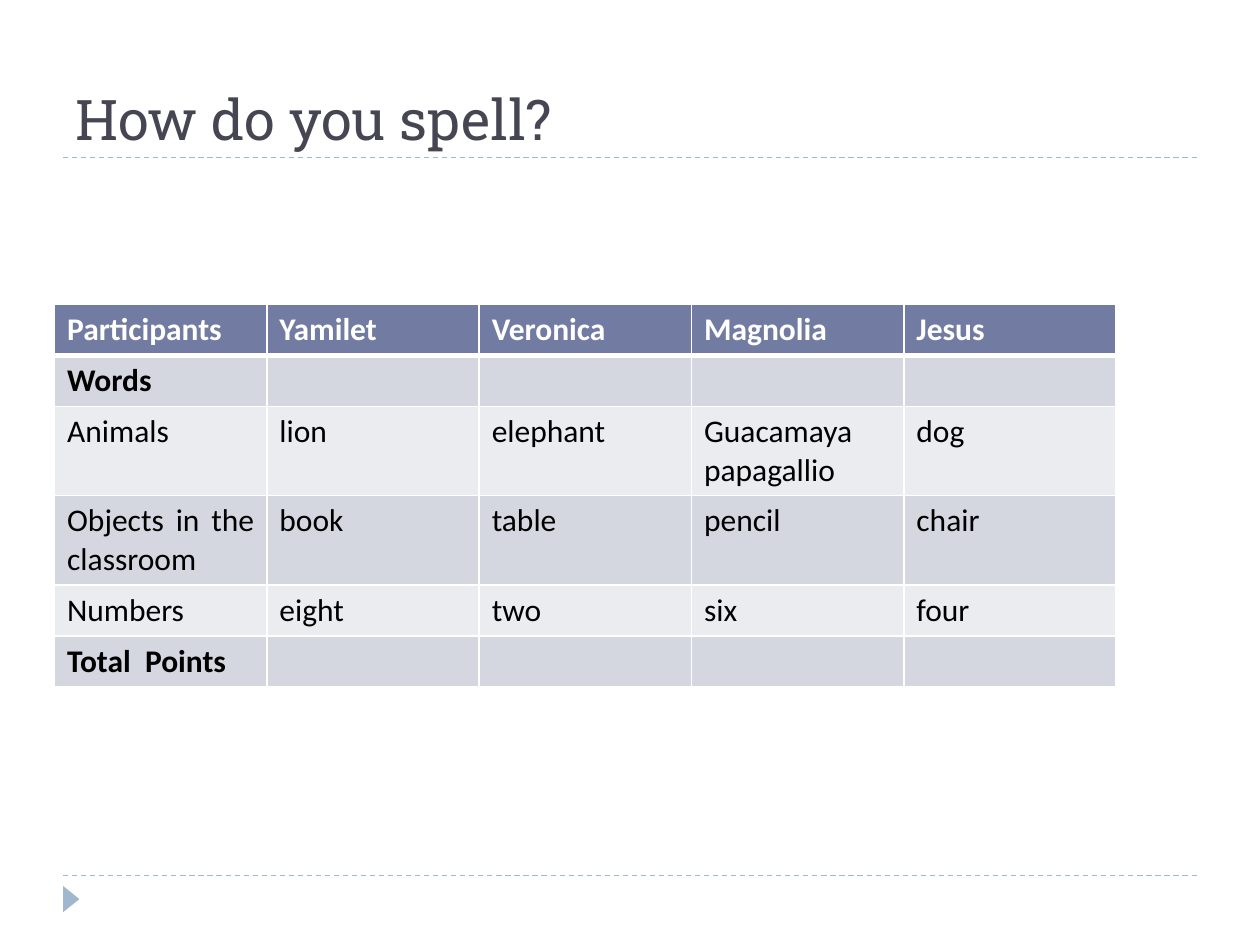
from lxml import etree
from pptx import Presentation
from pptx.dml.color import RGBColor
from pptx.enum.dml import MSO_LINE
from pptx.enum.shapes import MSO_CONNECTOR, MSO_SHAPE
from pptx.enum.text import MSO_ANCHOR, PP_ALIGN
from pptx.oxml.ns import qn
from pptx.util import Cm, Pt

STRAIGHT = MSO_CONNECTOR.STRAIGHT
TRIANGLE = MSO_SHAPE.ISOSCELES_TRIANGLE
DASH = MSO_LINE.DASH
BOTTOM = MSO_ANCHOR.BOTTOM
JUSTIFY = PP_ALIGN.JUSTIFY

WHITE = RGBColor(0xFF, 0xFF, 0xFF)
BLACK = RGBColor(0x00, 0x00, 0x00)
SLATE = RGBColor(0x46, 0x46, 0x53)
SKY = RGBColor(0x9F, 0xB8, 0xCD)
HEADER_FILL = RGBColor(0x72, 0x7C, 0xA3)
BAND_FILLS = (RGBColor(0xEB, 0xEC, 0xF0), RGBColor(0xD5, 0xD7, 0xE0))

TITLE = "How do you spell?"
ROWS = [
    ("Participants", "Yamilet", "Veronica", "Magnolia", "Jesus"),
    ("Words", "", "", "", ""),
    ("Animals", "lion", "elephant", "Guacamaya\npapagallio", "dog"),
    ("Objects in the classroom", "book", "table", "pencil", "chair"),
    ("Numbers", "eight", "two", "six", "four"),
    ("Total  Points", "", "", "", ""),
]
BOLD_ROWS = (0, 1, 5)
ROW_HEIGHTS = (1.03, 1.03, 1.8, 1.8, 1.03, 1.03)
COLUMN_WIDTH = 4.28
RULE_HEIGHTS = (17.65, 3.18)


def add_rule(page, y):
    rule = page.shapes.add_connector(STRAIGHT, Cm(1.27), Cm(y), Cm(24.13), Cm(y))
    rule.line.color.rgb = SKY
    rule.line.width = Pt(0.75)
    rule.line.dash_style = DASH
    etree.SubElement(rule._element.spPr, qn("a:effectLst"))


def add_marker(page):
    marker = page.shapes.add_shape(TRIANGLE, Cm(1.17), Cm(17.96), Cm(0.53), Cm(0.33))
    marker.rotation = 90
    marker.shadow.inherit = False
    marker.fill.solid()
    marker.fill.fore_color.rgb = SKY
    marker.line.fill.background()


def set_font(para, name, size, color, bold=False):
    para.font.name = name
    para.font.size = Pt(size)
    para.font.color.rgb = color
    para.font.bold = bold


def add_title(page):
    frame = page.shapes.add_textbox(Cm(1.27), Cm(0.64), Cm(22.86), Cm(2.54)).text_frame
    frame.word_wrap = True
    frame.vertical_anchor = BOTTOM
    frame.text = TITLE
    set_font(frame.paragraphs[0], "Roboto Slab", 32, SLATE)


def set_borders(cell, top, bottom):
    """Draw white cell edges; top and bottom are widths in points."""
    properties = cell._tc.get_or_add_tcPr()
    edges = (("a:lnL", 1), ("a:lnR", 1), ("a:lnT", top), ("a:lnB", bottom))
    for position, (tag, width) in enumerate(edges):
        edge = etree.Element(qn(tag), w=str(Pt(width)))
        fill = etree.SubElement(edge, qn("a:solidFill"))
        etree.SubElement(fill, qn("a:srgbClr"), val=str(WHITE))
        properties.insert(position, edge)


def add_word_table(page):
    columns = len(ROWS[0])
    table = page.shapes.add_table(
        len(ROWS), columns, Cm(1.1), Cm(6.13),
        Cm(COLUMN_WIDTH * columns), Cm(sum(ROW_HEIGHTS))).table
    for column in table.columns:
        column.width = Cm(COLUMN_WIDTH)
    for r, words in enumerate(ROWS):
        table.rows[r].height = Cm(ROW_HEIGHTS[r])
        for c, word in enumerate(words):
            cell = table.cell(r, c)
            cell.text = word
            cell.fill.solid()
            cell.fill.fore_color.rgb = BAND_FILLS[r % 2] if r else HEADER_FILL
            set_borders(cell, 3 if r == 1 else 1, 3 if r == 0 else 1)
            for para in cell.text_frame.paragraphs:
                if c == 0 and r not in BOLD_ROWS:
                    para.alignment = JUSTIFY
                set_font(para, "Calibri", 18, BLACK if r else WHITE, r in BOLD_ROWS)


def main():
    deck = Presentation()
    deck.slide_width, deck.slide_height = Cm(25.4), Cm(19.05)
    page = deck.slides.add_slide(deck.slide_layouts[6])
    for y in RULE_HEIGHTS:
        add_rule(page, y)
    add_marker(page)
    add_title(page)
    add_word_table(page)
    deck.save("out.pptx")


if __name__ == "__main__":
    main()
